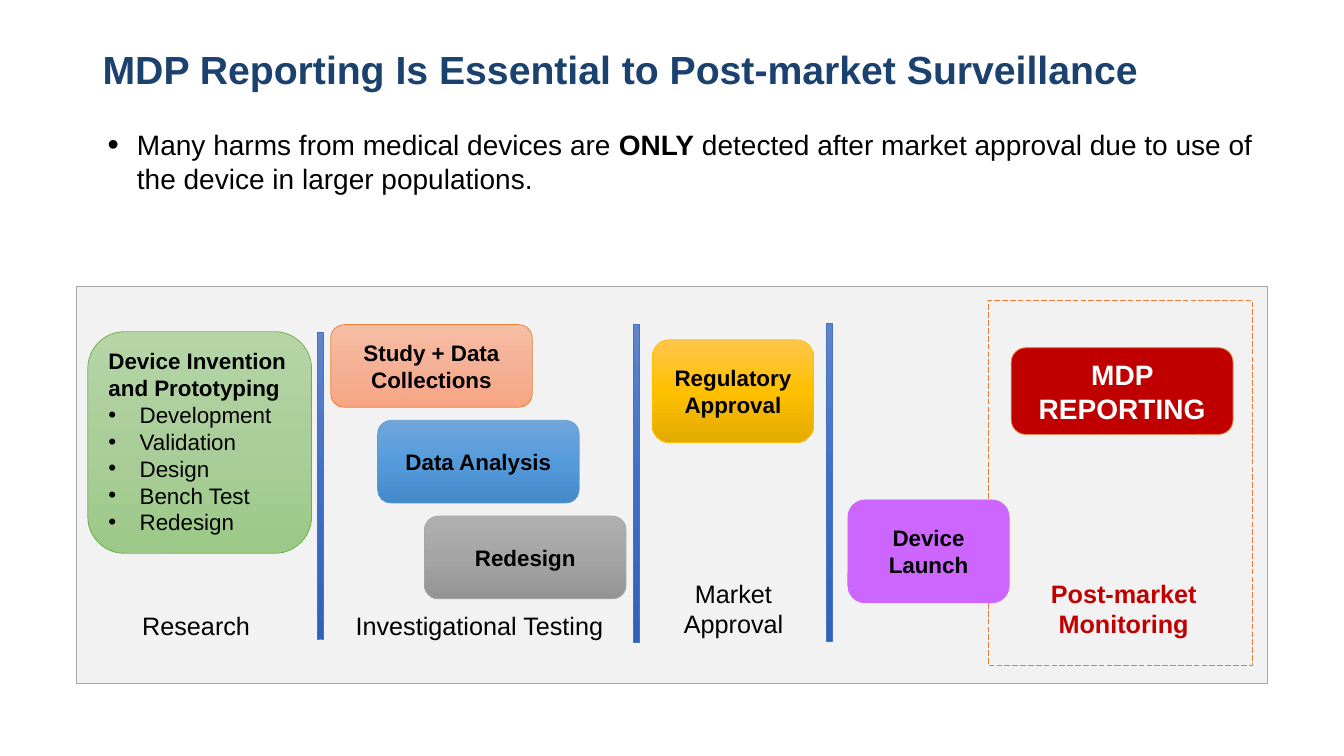
from copy import deepcopy

from lxml import etree
from pptx import Presentation
from pptx import util as u
from pptx.dml.color import RGBColor
from pptx.enum import dml, shapes, text
from pptx.oxml.ns import qn

COLORS = {
    "title": "1B416F", "black": "000000", "white": "FFFFFF", "red": "C00000",
    "panel": "F2F2F2", "panel_edge": "A6A6A6", "orange": "ED7D31",
    "green": "70AD47", "blue": "5B9BD5", "gray": "A5A5A5",
    "gold": "FFC000", "purple": "CC66FF", "divider": "4472C4",
}
GRADIENTS = {
    "green": ("B5D5A7", "AACE9A", "9CC987"),
    "orange": ("F7BDA5", "F5B196", "F8A582"),
    "blue": ("71A6DB", "559BDB", "448ACA"),
    "gray": ("AFAFAF", "A5A5A5", "939393"),
    "gold": ("FFC64B", "FFC000", "E3AB00"),
    "divider": ("6183CB", "3E70CA", "3062BB"),
}
RECT = shapes.MSO_SHAPE.RECTANGLE
ROUNDED = shapes.MSO_SHAPE.ROUNDED_RECTANGLE


def write(paragraph, words, size=16, color="black", bold=False):
    run = paragraph.add_run()
    run.text = words
    run.font.name = "Arial"
    run.font.size = u.Pt(size)
    run.font.bold = bold
    run.font.color.rgb = RGBColor.from_string(COLORS[color])


class DeviceSlide:
    def __init__(self, prs):
        self.slide = prs.slides.add_slide(prs.slide_layouts[6])

    def text_box(self, box, lines=(), centered=True, **style):
        frame = self.slide.shapes.add_textbox(*map(u.Inches, box)).text_frame
        frame.word_wrap = True
        self.fill_lines(frame, lines, centered, **style)
        return frame

    def fill_lines(self, frame, lines, centered=True, **style):
        for i, line in enumerate(lines):
            paragraph = frame.add_paragraph() if i else frame.paragraphs[0]
            paragraph.alignment = text.PP_ALIGN.CENTER if centered else text.PP_ALIGN.LEFT
            write(paragraph, line, **style)

    def bullet(self, paragraph, indent, percent=100):
        props = paragraph._p.get_or_add_pPr()
        props.set("marL", str(u.Inches(indent)))
        props.set("indent", str(u.Inches(-indent)))
        etree.SubElement(props, qn("a:buSzPct")).set("val", str(percent * 1000))
        etree.SubElement(props, qn("a:buFont")).set("typeface", "Arial")
        etree.SubElement(props, qn("a:buChar")).set("char", "•")

    def shape(self, kind, box, fill, edge, dash=None):
        shape = self.slide.shapes.add_shape(kind, *map(u.Inches, box))
        shape.shadow.inherit = False
        if fill is None:
            shape.fill.background()
        elif fill in GRADIENTS:
            self.gradient(shape.fill, GRADIENTS[fill])
        else:
            shape.fill.solid()
            shape.fill.fore_color.rgb = RGBColor.from_string(COLORS[fill])
        shape.line.color.rgb = RGBColor.from_string(COLORS[edge])
        shape.line.width = u.Pt(0.5)
        if dash:
            shape.line.dash_style = dash
        return shape

    def gradient(self, fill, tones):
        fill.gradient()
        fill.gradient_angle = 270  # counted anticlockwise: top to bottom
        first = fill._xPr.find(".//" + qn("a:gs"))
        first.addnext(deepcopy(first))
        for stop, tone, position in zip(fill.gradient_stops, tones, (0, 0.5, 1)):
            stop.color.rgb = RGBColor.from_string(tone)
            stop.position = position

    def card(self, box, words, fill, edge=None, **style):
        frame = self.shape(ROUNDED, box, fill, edge or fill).text_frame
        frame.word_wrap = True
        frame.vertical_anchor = text.MSO_ANCHOR.MIDDLE
        self.fill_lines(frame, [words], **{"bold": True, **style})
        return frame


def main():
    prs = Presentation()
    prs.slide_width, prs.slide_height = u.Inches(13.33), u.Inches(7.5)
    page = DeviceSlide(prs)

    # Title and message
    page.text_box((0.92, 0.4, 11.5, 0.6),
                  ["MDP Reporting Is Essential to Post-market Surveillance"],
                  centered=False, size=28, color="title", bold=True)
    message = page.text_box((0.97, 1.22, 11.6, 0.77)).paragraphs[0]
    message.space_before = u.Pt(6)
    page.bullet(message, 0.29, percent=115)
    write(message, "Many harms from medical devices are ", size=20)
    write(message, "ONLY", size=20, bold=True)
    write(message, " detected after market approval due to use of the device"
                   " in larger populations.", size=20)

    # Panel
    page.shape(RECT, (0.76, 2.84, 11.81, 3.94), "panel", "panel_edge")

    # Research
    invention = page.card((0.87, 3.29, 2.22, 2.2),
                          "Device Invention and Prototyping", "green")
    invention.vertical_anchor = text.MSO_ANCHOR.TOP
    invention.paragraphs[0].alignment = text.PP_ALIGN.LEFT
    for step in ("Development", "Validation", "Design", "Bench Test", "Redesign"):
        paragraph = invention.add_paragraph()
        paragraph.alignment = text.PP_ALIGN.LEFT
        page.bullet(paragraph, 0.31)
        write(paragraph, step)

    # Investigational testing, stepping down to the right
    testing = [("Study + Data Collections", "orange"),
               ("Data Analysis", "blue"), ("Redesign", "gray")]
    for i, (words, fill) in enumerate(testing):
        page.card((3.28 + 0.465 * i, 3.22 + 0.95 * i, 2, 0.82), words, fill)

    # Approval
    page.card((6.47, 3.37, 1.6, 1.02), "Regulatory Approval", "gold")

    # Stage names
    for box, lines in (
        ((0.92, 6.01, 2.05, 0.42), ["Research"]),
        ((3.38, 6.01, 2.75, 0.42), ["Investigational Testing"]),
        ((6.25, 5.69, 2.05, 0.73), ["Market", "Approval"]),
    ):
        page.text_box(box, lines, size=18)
    page.text_box((10.05, 5.69, 2.19, 0.73), ["Post-market Monitoring"],
                  size=18, color="red", bold=True)

    # Stage dividers
    for left, top, height in ((3.15, 3.3, 3.04), (6.28, 3.22, 3.15), (8.2, 3.21, 3.15)):
        page.shape(RECT, (left, top, 0.06, height), "divider", "divider")

    # Launch and post-market monitoring
    page.shape(RECT, (9.8, 2.98, 2.62, 3.62), None, "orange",
               dash=dml.MSO_LINE.LONG_DASH)
    page.card((8.41, 4.96, 1.6, 1.02), "Device Launch", "purple")
    page.card((10.03, 3.45, 2.2, 0.86), "MDP REPORTING", "red", "orange",
              size=20, color="white")

    prs.save("out.pptx")


if __name__ == "__main__":
    main()
